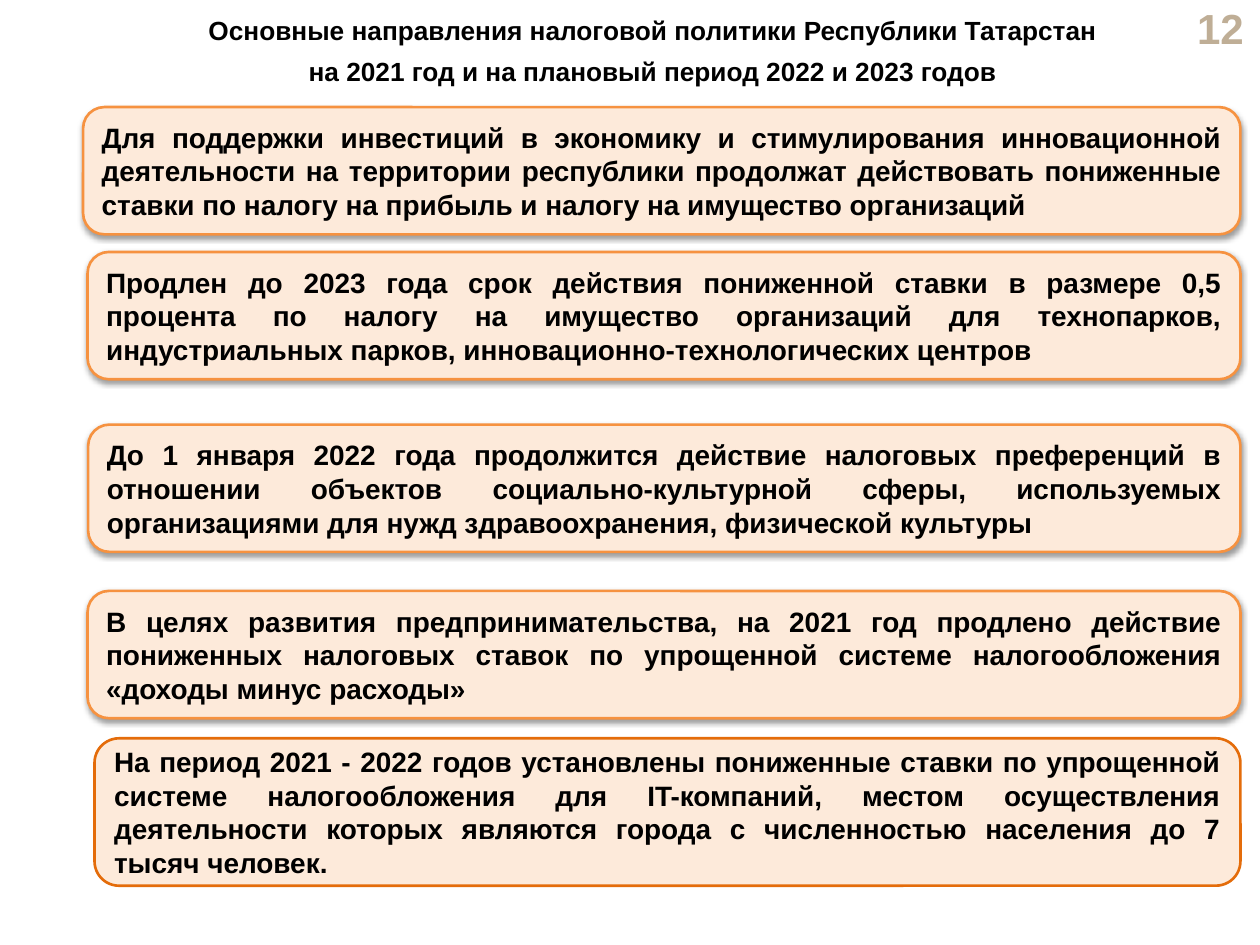
import pptx
import pptx.util
import pptx.dml.color
import pptx.enum.shapes
import pptx.enum.text
from dataclasses import dataclass
from lxml import etree

ALIGN = pptx.enum.text.PP_ALIGN
ANCHOR = pptx.enum.text.MSO_ANCHOR

PAGE_NUMBER = "12"
TITLE = [
    "Основные направления налоговой политики Республики Татарстан",
    "на 2021 год и на плановый период 2022 и 2023 годов",
]
MEASURES = [
    "Для поддержки инвестиций в экономику и стимулирования инновационной деятельности на территории республики продолжат действовать пониженные ставки по налогу на прибыль и налогу на имущество организаций",
    "Продлен до 2023 года срок действия пониженной ставки в размере 0,5 процента по налогу на имущество организаций для технопарков, индустриальных парков, инновационно-технологических центров",
    "До 1 января 2022 года продолжится действие налоговых преференций в отношении объектов социально-культурной сферы, используемых организациями для нужд здравоохранения, физической культуры",
    "В целях развития предпринимательства, на 2021 год продлено действие пониженных налоговых ставок по упрощенной системе налогообложения «доходы минус расходы»",
]
IT_MEASURE = "На период 2021 - 2022 годов установлены пониженные ставки по упрощенной системе налогообложения для IT-компаний, местом осуществления деятельности которых являются города с численностью населения до 7 тысяч человек."

COLUMNS, ROWS = 100, 75
RIGHT_EDGE = 98.45
MEASURE_STARTS = [(6.6, 8.5), (6.95, 20), (7, 33.7), (6.95, 46.9)]
MEASURE_HEIGHT = 10.1
IT_START, IT_HEIGHT = (7.5, 58.6), 11.7


@dataclass(frozen=True)
class Theme:
    font: str = "Arial"
    text: str = "000000"
    number: str = "BFAE96"
    fill: str = "FDEADA"
    line: str = "F69240"
    strong_line: str = "E46C0A"
    number_size: float = 24
    title_size: float = 15
    body_size: float = 16
    line_width: float = 1.5


THEME = Theme()
deck = pptx.Presentation()
deck.slide_width = pptx.util.Inches(10)
deck.slide_height = pptx.util.Inches(7.5)
page = deck.slides.add_slide(deck.slide_layouts[6])


def color(value):
    return pptx.dml.color.RGBColor.from_string(value)


def place(column, row, width, height):
    across, down = deck.slide_width / COLUMNS, deck.slide_height / ROWS
    return [round(n) for n in (column * across, row * down, width * across, height * down)]


def write(box, lines, size, align, anchor, ink=THEME.text, spacing=None, gap=0):
    frame = box.text_frame
    frame.word_wrap = True
    frame.vertical_anchor = anchor
    for index, line in enumerate(lines):
        para = frame.add_paragraph() if index else frame.paragraphs[0]
        para.alignment = align
        para.line_spacing = spacing
        if index:
            para.space_before = pptx.util.Pt(gap)
        span = para.add_run()
        span.text = line
        span.font.name = THEME.font
        span.font.size = pptx.util.Pt(size)
        span.font.bold = True
        span.font.color.rgb = color(ink)


def add_shadow(box):
    effects = box._element.spPr.find(pptx.oxml.ns.qn("a:effectLst"))
    shadow = etree.SubElement(
        effects, pptx.oxml.ns.qn("a:outerShdw"),
        blurRad=str(pptx.util.Pt(3.1)), dist=str(pptx.util.Pt(1.6)),
        dir="5400000", rotWithShape="0")
    tint = etree.SubElement(shadow, pptx.oxml.ns.qn("a:srgbClr"), val="000000")
    etree.SubElement(tint, pptx.oxml.ns.qn("a:alpha"), val="38000")


def add_panel(text, start, height, line):
    column, row = start
    box = page.shapes.add_shape(
        pptx.enum.shapes.MSO_SHAPE.ROUNDED_RECTANGLE,
        *place(column, row, RIGHT_EDGE - column, height))
    box.shadow.inherit = False
    box.fill.solid()
    box.fill.fore_color.rgb = color(THEME.fill)
    box.line.color.rgb = color(line)
    box.line.width = pptx.util.Pt(THEME.line_width)
    write(box, [text], THEME.body_size, ALIGN.JUSTIFY, ANCHOR.MIDDLE)
    return box


number = page.shapes.add_textbox(*place(91.1, 0.5, 8.6, 3.4))
write(number, [PAGE_NUMBER], THEME.number_size, ALIGN.RIGHT, ANCHOR.MIDDLE, THEME.number)

title = page.shapes.add_textbox(*place(5.6, 0.9, 92.4, 7.2))
write(title, TITLE, THEME.title_size, ALIGN.CENTER, ANCHOR.TOP, spacing=0.9, gap=7.5)

for measure, start in zip(MEASURES, MEASURE_STARTS):
    add_shadow(add_panel(measure, start, MEASURE_HEIGHT, THEME.line))
add_panel(IT_MEASURE, IT_START, IT_HEIGHT, THEME.strong_line)

deck.save("out.pptx")
